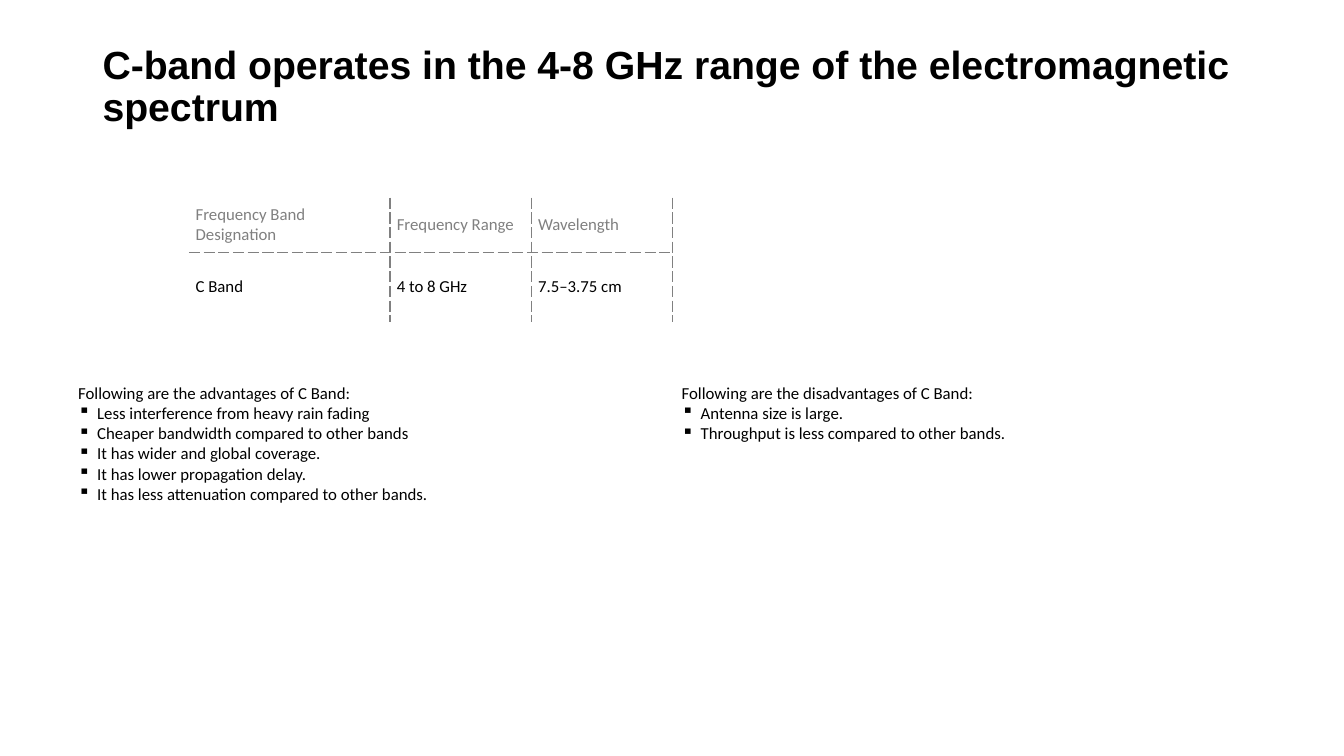
"""Build the C-band overview slide."""
from dataclasses import dataclass

from lxml import etree
from pptx import Presentation
from pptx import util as u
from pptx.dml.color import RGBColor
from pptx.enum import text
from pptx.oxml.ns import qn


@dataclass(frozen=True)
class Theme:
    """Colours, fonts and type sizes."""
    ink: str = "000000"
    muted: str = "808080"
    paper: str = "FFFFFF"
    heading: str = "Arial"
    body: str = "Calibri"
    title_size: int = 28
    body_size: int = 12


class Deck:
    """Hold the theme and the current slide, and add elements to it."""

    def __init__(self, theme):
        """Start a widescreen presentation."""
        self.theme = theme
        self.prs = Presentation()
        self.prs.slide_width, self.prs.slide_height = u.Cm(33.87), u.Cm(19.05)

    def add_slide(self):
        """Add a title-only slide and make it current."""
        self.s = self.prs.slides.add_slide(self.prs.slide_layouts[5])

    def style(self, p, color, **changes):
        """Format one paragraph in the body style with changes."""
        values = {"name": self.theme.body, "size": u.Pt(self.theme.body_size),
                  "bold": False, **changes}
        for r in p.runs:
            for name, value in values.items():
                setattr(r.font, name, value)
            r.font.color.rgb = RGBColor.from_string(color)

    def frame(self, tf):
        """Set wrapping, anchor and fit of a text frame."""
        values = {"word_wrap": True, "vertical_anchor": text.MSO_ANCHOR.TOP,
                  "auto_size": text.MSO_AUTO_SIZE.NONE}
        for name, value in values.items():
            setattr(tf, name, value)

    def title(self, words, box):
        """Place and format the title."""
        sp = self.s.shapes.title
        for name, value in zip(("left", "top", "width", "height"), box):
            setattr(sp, name, u.Cm(value))
        sp.text_frame.text = words
        self.frame(sp.text_frame)
        p = sp.text_frame.paragraphs[0]
        p.alignment, p.line_spacing = text.PP_ALIGN.LEFT, 0.9
        self.style(p, self.theme.ink, name=self.theme.heading,
                   size=u.Pt(self.theme.title_size), bold=True)

    def bullets(self, lead, items, box):
        """Add a lead line with a bulleted list."""
        tf = self.s.shapes.add_textbox(*map(u.Cm, box)).text_frame
        self.frame(tf)
        tf.text = "\n".join([lead, *items])
        for p in tf.paragraphs:
            self.style(p, self.theme.ink)
        for p in tf.paragraphs[1:]:
            pPr = p._p.get_or_add_pPr()
            pPr.set("marL", str(u.Cm(0.48)))
            pPr.set("indent", str(-u.Cm(0.48)))
            etree.SubElement(pPr, qn("a:buChar"), char="▪")

    def borders(self, cell, dashed):
        """Draw the named sides dashed and leave the others clear."""
        for i, side in enumerate("LRTB"):
            ln = etree.Element(qn(f"a:ln{side}"), w=str(u.Pt(1)))
            if side in dashed:
                fill = etree.SubElement(ln, qn("a:solidFill"))
                etree.SubElement(fill, qn("a:srgbClr"), val=self.theme.muted)
                etree.SubElement(ln, qn("a:prstDash"), val="sysDash")
            else:
                etree.SubElement(ln, qn("a:noFill"))
            cell._tc.get_or_add_tcPr().insert(i, ln)

    def table(self, rows, box, widths, heights):
        """Add a table with dashed inner rules and a dashed right edge."""
        sp = self.s.shapes.add_table(len(rows), len(widths), *map(u.Cm, box))
        tbl = sp.table
        tbl.first_row = tbl.horz_banding = False
        for column, width in zip(tbl.columns, widths):
            column.width = u.Cm(width)
        for row, height in zip(tbl.rows, heights):
            row.height = u.Cm(height)
        sp.height = u.Cm(box[3])
        for i, row in enumerate(rows):
            for j, words in enumerate(row):
                cell = tbl.cell(i, j)
                cell.text = words
                cell.vertical_anchor = text.MSO_ANCHOR.MIDDLE
                for side in ("left", "right", "top", "bottom"):
                    setattr(cell, f"margin_{side}", u.Cm(0.17))
                if i:
                    cell.fill.solid()
                    cell.fill.fore_color.rgb = RGBColor.from_string(self.theme.paper)
                else:
                    cell.fill.background()
                self.borders(cell, ("RT" if i else "RB") + ("L" if j else ""))
                color = self.theme.ink if i else self.theme.muted
                self.style(cell.text_frame.paragraphs[0], color)


def main():
    """Compose and save the slide."""
    deck = Deck(Theme())
    deck.add_slide()
    deck.title("C-band operates in the 4-8 GHz range of the electromagnetic spectrum",
               (2.33, 1.01, 29.21, 3.68))
    deck.table([("Frequency Band Designation", "Frequency Range", "Wavelength"),
                ("C Band", "4 to 8 GHz", "7.5–3.75 cm")],
               (4.76, 4.98, 12.19, 3.1), (5.07, 3.56, 3.56), (0.81, 1.75))
    lists = {
        "advantages": ["Less interference from heavy rain fading",
                       "Cheaper bandwidth compared to other bands",
                       "It has wider and global coverage.",
                       "It has lower propagation delay.",
                       "It has less attenuation compared to other bands."],
        "disadvantages": ["Antenna size is large.",
                          "Throughput is less compared to other bands."],
    }
    for left, (topic, items) in zip((1.72, 16.93), lists.items()):
        deck.bullets(f"Following are the {topic} of C Band:", items,
                     (left, 9.52, 12.7, 7.82))
    deck.prs.save("out.pptx")


if __name__ == "__main__":
    main()
